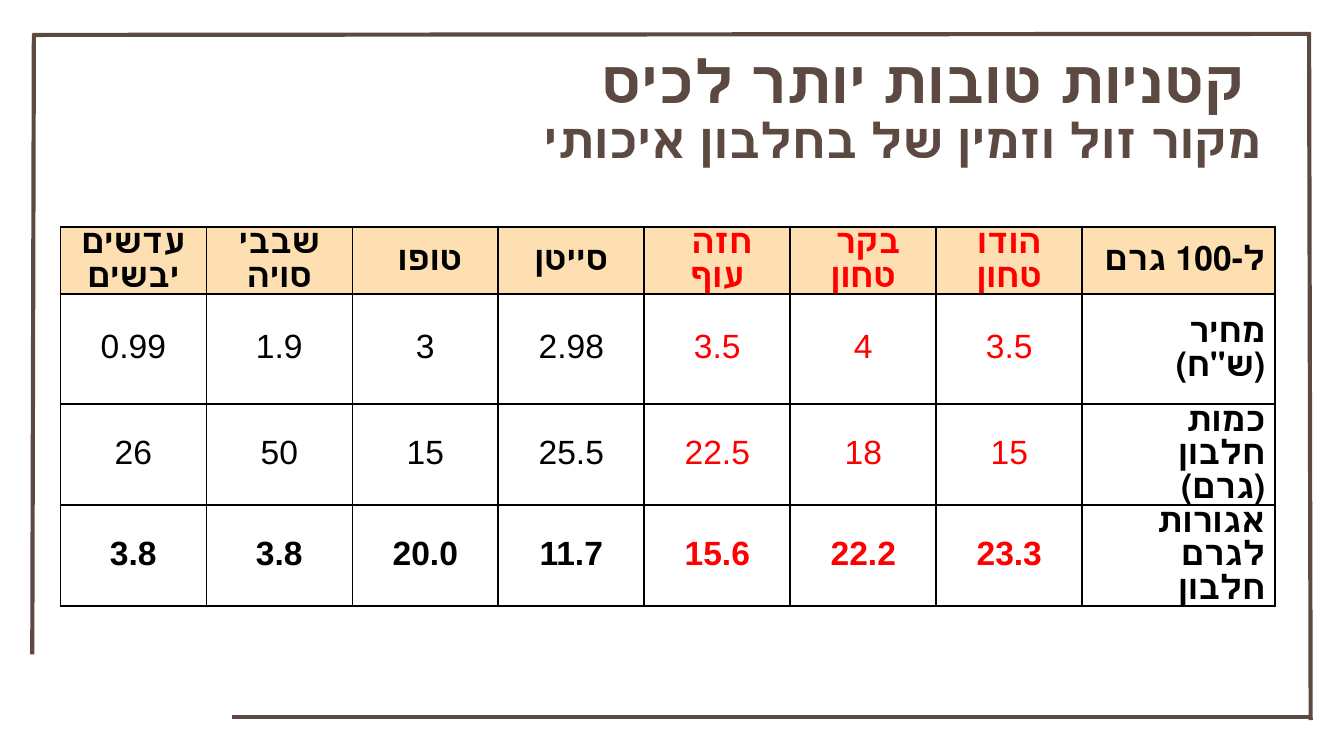
from dataclasses import dataclass

import pptx
import pptx.dml.color
import pptx.enum.shapes
import pptx.enum.text
import pptx.oxml
import pptx.oxml.ns
import pptx.util
from pptx.util import Cm, Pt

BROWN, BLACK, RED = "5C4942", "000000", "FF0000"
WHITE, ORANGE = "FFFFFF", "FCB040"
ALIGN = pptx.enum.text.PP_ALIGN
MIDDLE = pptx.enum.text.MSO_ANCHOR.MIDDLE


@dataclass
class FrameLine:
    x1: float
    y1: float
    x2: float
    y2: float


@dataclass
class Food:
    name: str
    price: str
    protein: str
    cost: str
    color: str = BLACK


FRAME = [
    FrameLine(0.61, 12.37, 0.64, 0.64),
    FrameLine(24.77, 0.64, 0.61, 0.66),
    FrameLine(24.77, 13.61, 24.74, 0.61),
    FrameLine(24.77, 13.56, 4.39, 13.56),
]
HEADINGS = [("קטניות טובות יותר לכיס ", 32), ("מקור זול וזמין של בחלבון איכותי", 26)]
FOODS = [
    Food("עדשים יבשים", "0.99", "26", "3.8"),
    Food("שבבי סויה", "1.9", "50", "3.8"),
    Food("טופו ", "3", "15", "20.0"),
    Food("סייטן", "2.98", "25.5", "11.7"),
    Food("חזה \nעוף", "3.5", "22.5", "15.6", RED),
    Food("בקר \nטחון", "4", "18", "22.2", RED),
    Food("הודו טחון", "3.5", "15", "23.3", RED),
    Food("ל-100 גרם ", "מחיר (ש\"ח) ", "כמות חלבון (גרם)", "אגורות לגרם חלבון"),
]
ROW_HEIGHTS = [1.27, 2.08, 1.9, 1.9]
FOOD_WIDTH, LABEL_WIDTH = 2.76, 3.64


def rgb(value: str) -> pptx.dml.color.RGBColor:
    return pptx.dml.color.RGBColor.from_string(value)


def style_paragraph(paragraph, font_name: str, size: float, color: str, bold: bool) -> None:
    for run in paragraph.runs:
        run.font.name = font_name
        run.font.size = Pt(size)
        run.font.bold = bold
        run.font.color.rgb = rgb(color)


def draw_frame_line(slide, side: FrameLine) -> None:
    connector = slide.shapes.add_connector(
        pptx.enum.shapes.MSO_CONNECTOR.STRAIGHT,
        Cm(side.x1), Cm(side.y1), Cm(side.x2), Cm(side.y2))
    connector.line.color.rgb = rgb(BROWN)
    connector.line.width = Pt(2.25)
    pptx.oxml.ns.qn("a:effectLst")
    properties = connector._element.spPr
    properties.append(properties.makeelement(pptx.oxml.ns.qn("a:effectLst"), {}))


def draw_headings(slide) -> None:
    heading = slide.shapes.add_textbox(Cm(2.21), Cm(0.71), Cm(21.89), Cm(2.77)).text_frame
    heading.word_wrap = True
    heading.vertical_anchor = MIDDLE
    heading.text = "\n".join(text for text, _ in HEADINGS)
    for paragraph, (_, size) in zip(heading.paragraphs, HEADINGS):
        paragraph.alignment = ALIGN.RIGHT
        paragraph.line_spacing = 0.9
        style_paragraph(paragraph, "Karla", size, BROWN, True)


def add_borders(cell) -> None:
    properties = cell._tc.get_or_add_tcPr()
    for side in ("lnL", "lnR", "lnT", "lnB"):
        properties.append(pptx.oxml.parse_xml(
            f'<a:{side} {pptx.oxml.ns.nsdecls("a")} w="12700"><a:solidFill>'
            f'<a:srgbClr val="{BLACK}"/></a:solidFill></a:{side}>'))


def fill_cell(cell, text: str, color: str, header: bool, label: bool, bold: bool) -> None:
    add_borders(cell)
    cell.fill.solid()
    cell.fill.fore_color.rgb = rgb(ORANGE if header else WHITE)
    if header:
        tint = cell._tc.tcPr.find(".//" + pptx.oxml.ns.qn("a:solidFill") +
                                  f"/{pptx.oxml.ns.qn('a:srgbClr')}[@val='{ORANGE}']")
        tint.append(tint.makeelement(pptx.oxml.ns.qn("a:alpha"), {"val": "40000"}))
    cell.vertical_anchor = MIDDLE
    cell.margin_left = cell.margin_right = Cm(0.18)
    cell.margin_top = cell.margin_bottom = 0
    cell.text_frame.text = text
    for paragraph in cell.text_frame.paragraphs:
        paragraph.alignment = ALIGN.RIGHT if label else ALIGN.CENTER
        paragraph.line_spacing = Pt(18)
        if header or label:
            paragraph._p.get_or_add_pPr().set("rtl", "1")
        style_paragraph(paragraph, "Arial", 18, color, bold)


def draw_price_table(slide) -> None:
    widths = [FOOD_WIDTH] * (len(FOODS) - 1) + [LABEL_WIDTH]
    prices = slide.shapes.add_table(
        len(ROW_HEIGHTS), len(FOODS), Cm(1.14), Cm(4.29),
        Cm(sum(widths)), Cm(sum(ROW_HEIGHTS))).table
    prices.first_row = prices.horz_banding = False
    for row, height in zip(prices.rows, ROW_HEIGHTS):
        row.height = Cm(height)
    for column, (food, width) in enumerate(zip(FOODS, widths)):
        prices.columns[column].width = Cm(width)
        label = column == len(FOODS) - 1
        for row, text in enumerate((food.name, food.price, food.protein, food.cost)):
            bold = label or row in (0, len(ROW_HEIGHTS) - 1)
            fill_cell(prices.cell(row, column), text, food.color, row == 0, label, bold)


def main() -> None:
    presentation = pptx.Presentation()
    presentation.slide_width, presentation.slide_height = Cm(25.4), Cm(14.29)
    slide = presentation.slides.add_slide(presentation.slide_layouts[6])

    # Hand-drawn frame
    for side in FRAME:
        draw_frame_line(slide, side)

    # Title and subtitle
    draw_headings(slide)

    # Price and protein per food
    draw_price_table(slide)

    presentation.save("out.pptx")


if __name__ == "__main__":
    main()
